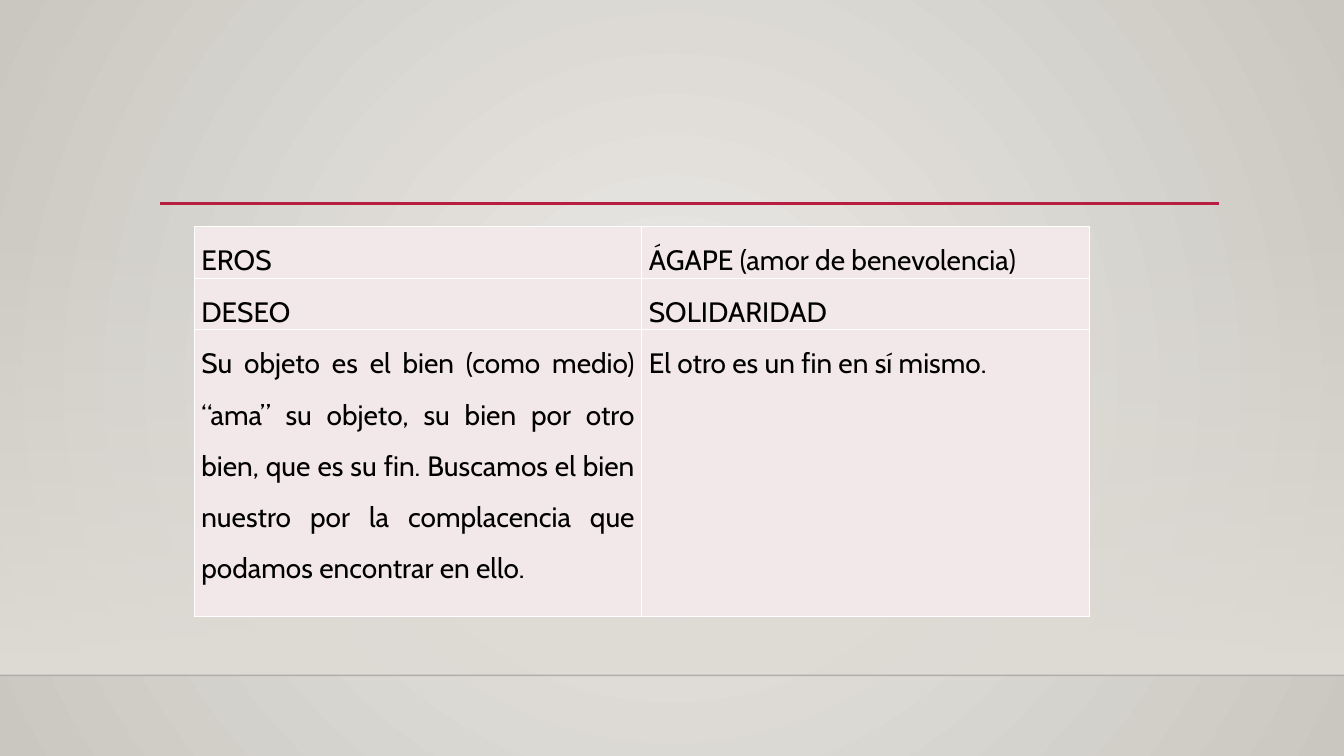
from pptx import Presentation
from pptx.dml.color import RGBColor
from pptx.enum.shapes import MSO_CONNECTOR as CONN, MSO_SHAPE as SHAPE
from pptx.enum.text import PP_ALIGN as ALIGN
from pptx.oxml import parse_xml
from pptx.oxml.ns import nsdecls, qn
from pptx.util import Pt

COLORS = {
    "bg_center": "ECEAE7",
    "bg_edge": "CAC7C1",
    "wall": "DFDBD5",
    "floor_line": "000001",
    "accent": "B71E42",
    "cell": "F3E8E9",
    "border": "FFFFFF",
    "text": "000000",
}
ROWS = [
    ("EROS", "ÁGAPE (amor de benevolencia)"),
    ("DESEO", "SOLIDARIDAD"),
    (
        "Su objeto es el bien (como medio) “ama” su objeto, su bien por otro bien, "
        "que es su fin. Buscamos el bien nuestro por la complacencia que podamos "
        "encontrar en ello.",
        "El otro es un fin en sí mismo.",
    ),
]
ROW_HEIGHTS = (36.9, 36.9, 204.6)
COLUMN_WIDTH = 319.7
WIDTH, HEIGHT = 960, 540
FLOOR = 482.4


def rgb(name):
    return RGBColor.from_string(COLORS[name])


def xml(tag, attrs="", inner=""):
    return parse_xml(f'<a:{tag} {nsdecls("a")} {attrs}>{inner}</a:{tag}>')


def set_gradient(fill, owner, names, direction):
    fill.gradient()
    for stop, name, position in zip(fill.gradient_stops, names, (0, 1)):
        stop.color.rgb = rgb(name)
        stop.position = position
    grad = owner.find(".//" + qn("a:gradFill"))
    grad.replace(grad.find(qn("a:lin")), direction)
    return grad


def set_alpha(owner, percent):
    owner.find(".//" + qn("a:srgbClr")).append(xml("alpha", f'val="{percent * 1000}"'))


def add_background(s):
    center = '<a:fillToRect l="50000" t="50000" r="50000" b="50000"/>'
    names = ("bg_center", "bg_edge")
    set_gradient(s.background.fill, s._element, names, xml("path", 'path="circle"', center))


def add_wall(s, top):
    sp = s.shapes.add_shape(SHAPE.RECTANGLE, 0, Pt(top), Pt(WIDTH), Pt(FLOOR - top))
    sp.shadow.inherit = False
    sp.line.fill.background()
    down = xml("lin", 'ang="5400000" scaled="0"')
    grad = set_gradient(sp.fill, sp._element, ("wall", "wall"), down)
    set_alpha(grad, 0)


def add_rule(s, left, right, y, color, width):
    line = s.shapes.add_connector(CONN.STRAIGHT, Pt(left), Pt(y), Pt(right), Pt(y))
    line.line.color.rgb = rgb(color)
    line.line.width = Pt(width)
    line._element.spPr.append(xml("effectLst"))
    return line


def add_borders(cell):
    props = cell._tc.get_or_add_tcPr()
    fill = f'<a:solidFill><a:srgbClr val="{COLORS["border"]}"/></a:solidFill>'
    for i, side in enumerate("LRTB"):
        props.insert(i, xml(f"ln{side}", f'w="{Pt(1)}"', fill))


def fill_cell(cell, text):
    cell.fill.solid()
    cell.fill.fore_color.rgb = rgb("cell")
    cell.margin_left = cell.margin_right = Pt(5)
    cell.margin_top = cell.margin_bottom = 0
    add_borders(cell)
    p = cell.text_frame.paragraphs[0]
    p.text = text
    p.alignment = ALIGN.JUSTIFY
    p.line_spacing = 1.5
    p.space_after = Pt(10)
    p.font.name = "Cabin"
    p.font.size = Pt(20)
    p.font.color.rgb = rgb("text")


def add_comparison(s, left, top):
    columns = len(ROWS[0])
    frame = s.shapes.add_table(len(ROWS), columns, Pt(left), Pt(top),
                               Pt(COLUMN_WIDTH * columns), Pt(sum(ROW_HEIGHTS)))
    table = frame.table
    table.first_row = table.horz_banding = False
    for column in table.columns:
        column.width = Pt(COLUMN_WIDTH)
    for row, height, texts in zip(table.rows, ROW_HEIGHTS, ROWS):
        row.height = Pt(height)
        for cell, text in zip(row.cells, texts):
            fill_cell(cell, text)


def main():
    prs = Presentation()
    prs.slide_width, prs.slide_height = Pt(WIDTH), Pt(HEIGHT)
    s = prs.slides.add_slide(prs.slide_layouts[6])
    add_background(s)
    add_wall(s, 159)
    floor = add_rule(s, 0, WIDTH, FLOOR, "floor_line", 1)
    set_alpha(floor._element.spPr, 20)
    add_rule(s, 114.5, 871, 145.2, "accent", 2.5)
    add_comparison(s, 138.8, 161.8)
    prs.save("out.pptx")


if __name__ == "__main__":
    main()
